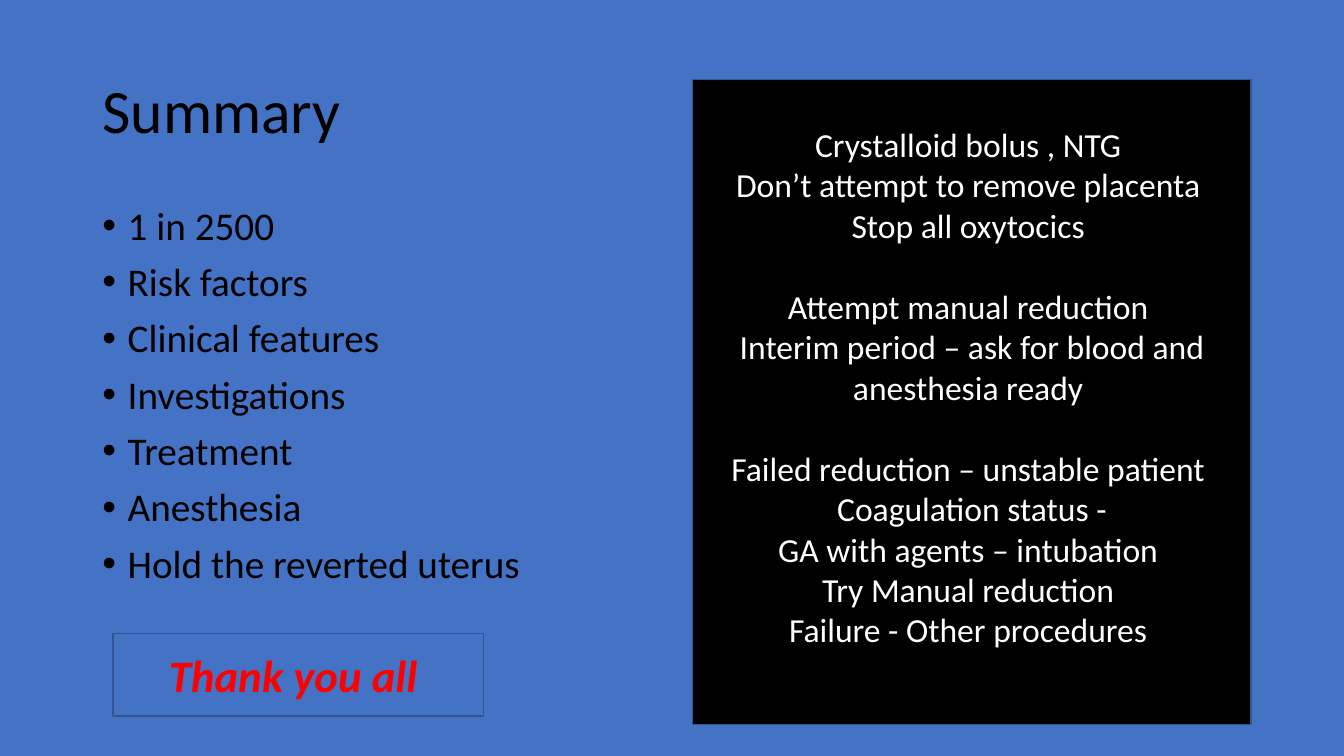
from dataclasses import dataclass

import pptx
import pptx.dml.color
import pptx.enum.shapes
import pptx.enum.text
import pptx.util
from lxml import etree

Cm = pptx.util.Cm
Pt = pptx.util.Pt
Align = pptx.enum.text.PP_ALIGN
Anchor = pptx.enum.text.MSO_ANCHOR


@dataclass(frozen=True)
class Theme:
    font: str = "Calibri"
    blue: str = "4472C4"
    outline: str = "325491"
    black: str = "000000"
    white: str = "FFFFFF"
    red: str = "FF0000"
    title_size: int = 44
    topic_size: int = 28
    step_size: int = 24
    thanks_size: int = 32
    group_gap: float = 29.3
    topic_gap: int = 10


THEME = Theme()

TOPICS = [
    "1 in 2500",
    "Risk factors",
    "Clinical features",
    "Investigations",
    "Treatment",
    "Anesthesia",
    "Hold the reverted uterus",
]

STEP_GROUPS = [
    [
        "Crystalloid bolus , NTG ",
        "Don’t attempt to remove placenta ",
        "Stop all oxytocics ",
    ],
    [
        "Attempt manual reduction ",
        "Interim period – ask for blood and anesthesia ready ",
    ],
    [
        "Failed reduction – unstable patient ",
        "Coagulation status -",
        "GA with agents – intubation ",
        "Try Manual reduction ",
        "Failure - Other procedures ",
    ],
]


def rgb(value):
    return pptx.dml.color.RGBColor.from_string(value)


def write(para, text, size, color, align=Align.LEFT, bold=False, italic=False,
          line_spacing=1.0, before=0):
    """Fill one paragraph with a single formatted run."""
    para.alignment = align
    para.line_spacing = line_spacing
    para.space_before = Pt(before)
    span = para.add_run()
    span.text = text
    span.font.name = THEME.font
    span.font.size = Pt(size)
    span.font.color.rgb = rgb(color)
    span.font.bold = bold
    span.font.italic = italic


def next_paragraph(frame):
    """Return the untouched first paragraph, or a new one after the last."""
    first = frame.paragraphs[0]
    return frame.add_paragraph() if first.runs else first


def add_bullet(para, indent):
    properties = para._p.get_or_add_pPr()
    properties.set("marL", str(indent))
    properties.set("indent", str(-indent))
    namespace = properties.nsmap["a"]
    etree.SubElement(properties, f"{{{namespace}}}buFont", typeface="Arial")
    etree.SubElement(properties, f"{{{namespace}}}buChar", char="•")


def place_title(page, text):
    title = page.shapes.title
    title.left, title.top = Cm(2.33), Cm(1.01)
    title.width, title.height = Cm(29.21), Cm(3.68)
    title.text_frame.vertical_anchor = Anchor.MIDDLE
    write(title.text_frame.paragraphs[0], text, THEME.title_size, THEME.black,
          line_spacing=0.9)


def add_topics(page, topics):
    box = page.shapes.add_textbox(Cm(2.33), Cm(5.07), Cm(29.21), Cm(12.09))
    box.text_frame.word_wrap = True
    for topic in topics:
        para = next_paragraph(box.text_frame)
        write(para, topic, THEME.topic_size, THEME.black, line_spacing=0.9,
              before=THEME.topic_gap)
        add_bullet(para, Cm(0.64))


def add_panel(page, left, top, width, height, fill):
    """Add an outlined rectangle and return its text frame."""
    panel = page.shapes.add_shape(
        pptx.enum.shapes.MSO_SHAPE.RECTANGLE, left, top, width, height)
    panel.shadow.inherit = False
    panel.fill.solid()
    panel.fill.fore_color.rgb = rgb(fill)
    panel.line.color.rgb = rgb(THEME.outline)
    panel.line.width = Pt(1)
    panel.text_frame.word_wrap = True
    panel.text_frame.vertical_anchor = Anchor.MIDDLE
    return panel.text_frame


def add_steps(page, groups):
    frame = add_panel(page, Cm(17.46), Cm(2.01), Cm(14.07), Cm(16.25),
                      THEME.black)
    frame.margin_bottom = Cm(0.9)
    for group_index, group in enumerate(groups):
        for step_index, step in enumerate(group):
            opens_group = group_index > 0 and step_index == 0
            write(next_paragraph(frame), step, THEME.step_size, THEME.white,
                  align=Align.CENTER,
                  before=THEME.group_gap if opens_group else 0)


def add_thanks(page, text):
    frame = add_panel(page, Cm(2.85), Cm(15.97), Cm(9.34), Cm(2.07),
                      THEME.blue)
    write(frame.paragraphs[0], text, THEME.thanks_size, THEME.red,
          align=Align.CENTER, bold=True, italic=True)


def main():
    deck = pptx.Presentation()
    deck.slide_width, deck.slide_height = Cm(33.87), Cm(19.05)
    page = deck.slides.add_slide(deck.slide_layouts.get_by_name("Title Only"))
    page.background.fill.solid()
    page.background.fill.fore_color.rgb = rgb(THEME.blue)
    place_title(page, "Summary")
    add_topics(page, TOPICS)
    add_steps(page, STEP_GROUPS)
    add_thanks(page, "Thank you all ")
    deck.save("out.pptx")


if __name__ == "__main__":
    main()
